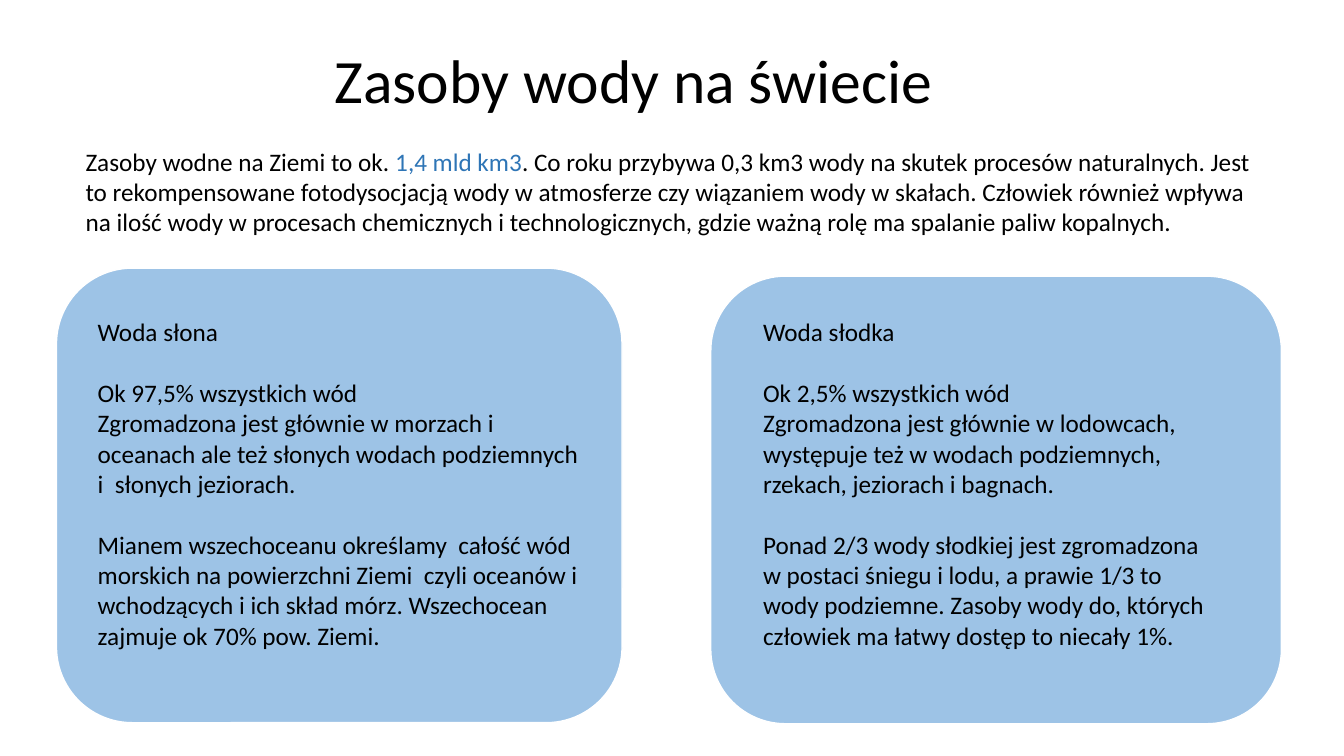
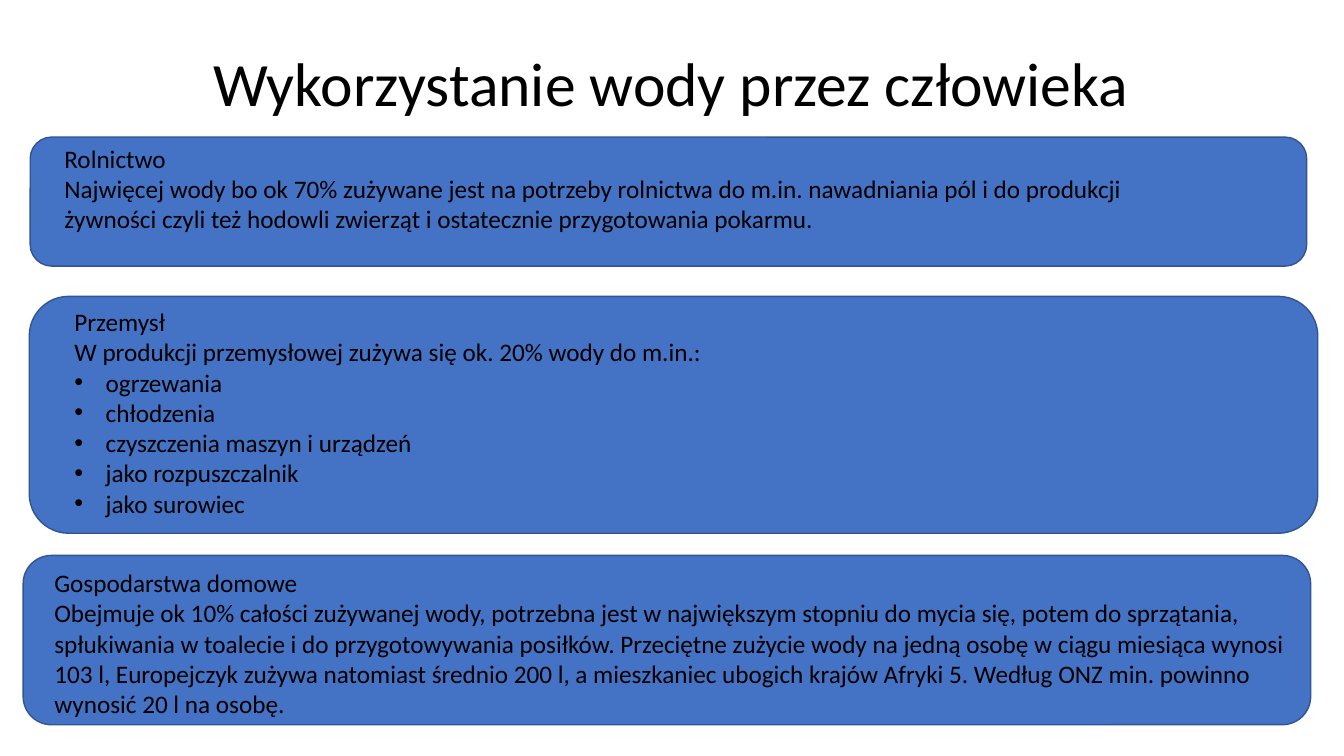
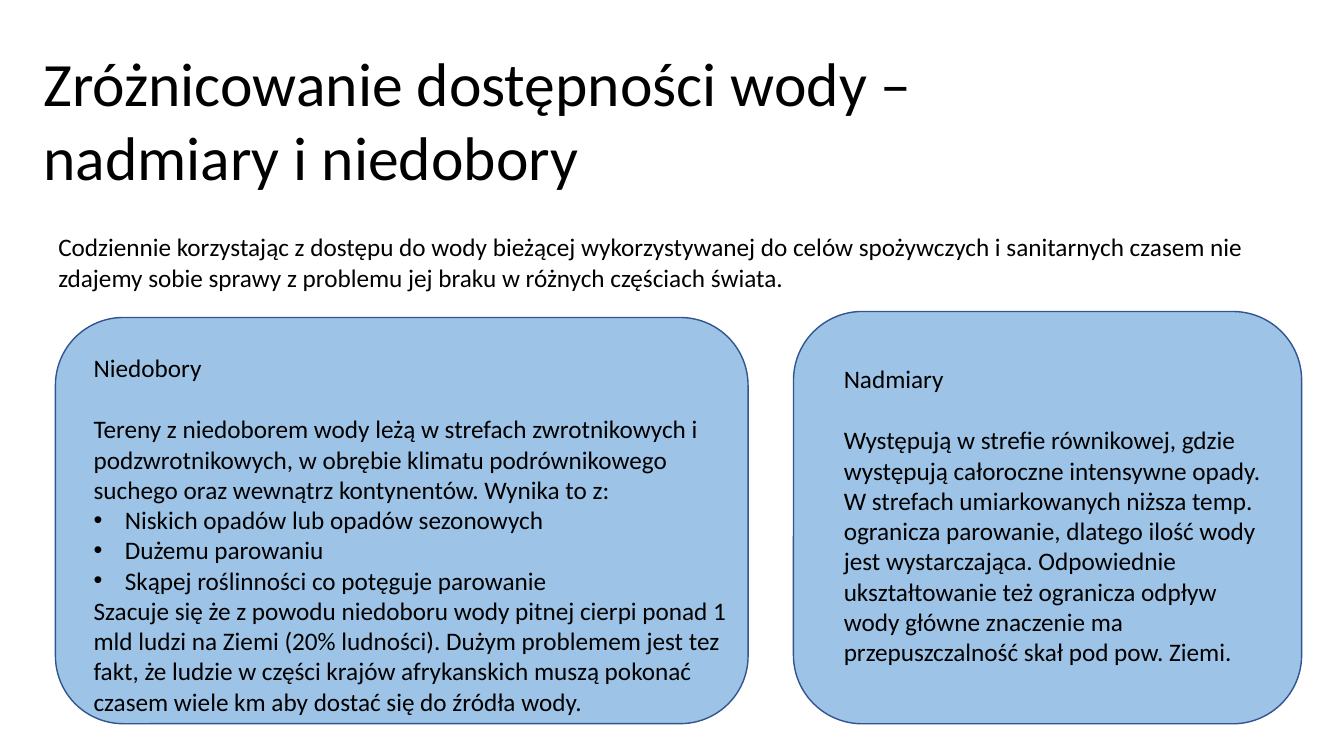
"""Build three slides on the world's water resources, its use and its availability."""
import pptx
import pptx.dml.color
import pptx.enum.shapes
import pptx.enum.text
import pptx.util
from lxml import etree

Inches, Pt = pptx.util.Inches, pptx.util.Pt

COLORS = {
    "paper": "FFFFFF",
    "ink": "000000",
    "accent": "2E75B6",
    "light": "9DC3E6",
    "strong": "4472C4",
    "outline": "325491",
}
FONT = "Calibri"
TITLE_SIZE, BODY_SIZE = 44, 18
BULLET_INDENT = Inches(0.31)
PARAGRAPH_FORMATS = {
    "plain": {},
    "gap": {"space_before": Pt(22)},
    "bullet": {},
}
FRAME_FORMAT = {
    "word_wrap": True,
    "auto_size": pptx.enum.text.MSO_AUTO_SIZE.SHAPE_TO_FIT_TEXT,
    "vertical_anchor": pptx.enum.text.MSO_ANCHOR.TOP,
}

SLIDES = [
    {
        "title": ((3.22, 0.37, 7.25, 0.84), ["Zasoby wody na świecie"]),
        "panel_style": ("light", "paper"),
        "panels": [(0.56, 2.66, 5.61, 4.51), (7.05, 2.74, 5.66, 4.44)],
        "texts": [
            ((0.75, 1.4, 11.95, 1.01), [
                ("plain", [
                    ("Zasoby wodne na Ziemi to ok. ", "ink"),
                    ("1,4 mld km3", "accent"),
                    (". Co roku przybywa 0,3 km3 wody na skutek procesów naturalnych. "
                     "Jest to rekompensowane fotodysocjacją wody w atmosferze czy wiązaniem "
                     "wody w skałach. Człowiek również wpływa na ilość wody w procesach "
                     "chemicznych i technologicznych, gdzie ważną rolę ma spalanie paliw "
                     "kopalnych.", "ink"),
                ]),
            ]),
            ((0.87, 3.09, 5.05, 4.04), [
                ("plain", "Woda słona"),
                ("gap", "Ok 97,5% wszystkich wód"),
                ("plain", "Zgromadzona jest głównie w morzach i oceanach ale też słonych "
                          "wodach podziemnych i  słonych jeziorach."),
                ("gap", "Mianem wszechoceanu określamy  całość wód morskich na powierzchni "
                        "Ziemi  czyli oceanów i wchodzących i ich skład mórz. Wszechocean "
                        "zajmuje ok 70% pow. Ziemi."),
            ]),
            ((7.47, 3.09, 4.66, 3.43), [
                ("plain", "Woda słodka"),
                ("gap", "Ok 2,5% wszystkich wód"),
                ("plain", "Zgromadzona jest głównie w lodowcach, występuje też w wodach "
                          "podziemnych, rzekach, jeziorach i bagnach."),
                ("gap", "Ponad 2/3 wody słodkiej jest zgromadzona w postaci śniegu i lodu, "
                        "a prawie 1/3 to wody podziemne. Zasoby wody do, których człowiek ma "
                        "łatwy dostęp to niecały 1%."),
            ]),
        ],
    },
    {
        "title": ((2.02, 0.4, 9.52, 0.84), ["Wykorzystanie wody przez człowieka"]),
        "panel_style": ("strong", "outline"),
        "panels": [(0.3, 1.36, 12.66, 1.28), (0.29, 2.94, 12.78, 2.35),
                   (0.23, 5.51, 12.77, 1.68)],
        "texts": [
            ((0.54, 1.37, 11.27, 1.01), [
                ("plain", "Rolnictwo"),
                ("plain", "Najwięcej wody bo ok 70% zużywane jest na potrzeby rolnictwa do "
                          "m.in. nawadniania pól i do produkcji żywności czyli też hodowli "
                          "zwierząt i ostatecznie przygotowania pokarmu."),
            ]),
            ((0.64, 2.99, 11.06, 2.52), [
                ("plain", "Przemysł"),
                ("plain", "W produkcji przemysłowej zużywa się ok. 20% wody do m.in.:"),
                ("bullet", "ogrzewania"),
                ("bullet", "chłodzenia"),
                ("bullet", "czyszczenia maszyn i urządzeń"),
                ("bullet", "jako rozpuszczalnik"),
                ("bullet", "jako surowiec"),
            ]),
            ((0.44, 5.58, 12.69, 1.92), [
                ("plain", "Gospodarstwa domowe"),
                ("plain", "Obejmuje ok 10% całości zużywanej wody, potrzebna jest w największym "
                          "stopniu do mycia się, potem do sprzątania, spłukiwania w toalecie i "
                          "do przygotowywania posiłków. Przeciętne zużycie wody na jedną osobę "
                          "w ciągu miesiąca wynosi 103 l, Europejczyk zużywa natomiast średnio "
                          "200 l, a mieszkaniec ubogich krajów Afryki 5. Według ONZ min. powinno "
                          "wynosić 20 l na osobę."),
            ]),
        ],
    },
    {
        "title": ((0.33, 0.4, 12.92, 1.58),
                  ["Zróżnicowanie dostępności wody –", "nadmiary i niedobory"]),
        "panel_style": ("light", "outline"),
        "panels": [(0.55, 3.15, 6.87, 4.03), (7.87, 3.09, 5.04, 4.09)],
        "texts": [
            ((0.48, 2.25, 12.37, 0.71), [
                ("plain", "Codziennie korzystając z dostępu do wody bieżącej wykorzystywanej do "
                          "celów spożywczych i sanitarnych czasem nie zdajemy sobie sprawy z "
                          "problemu jej braku w różnych częściach świata."),
            ]),
            ((0.83, 3.45, 6.5, 3.74), [
                ("plain", "Niedobory"),
                ("gap", "Tereny z niedoborem wody leżą w strefach zwrotnikowych i "
                        "podzwrotnikowych, w obrębie klimatu podrównikowego suchego oraz "
                        "wewnątrz kontynentów. Wynika to z:"),
                ("bullet", "Niskich opadów lub opadów sezonowych"),
                ("bullet", "Dużemu parowaniu"),
                ("bullet", "Skąpej roślinności co potęguje parowanie"),
                ("plain", "Szacuje się że z powodu niedoboru wody pitnej cierpi ponad 1 mld "
                          "ludzi na Ziemi (20% ludności). Dużym problemem jest tez fakt, że "
                          "ludzie w części krajów afrykanskich muszą pokonać czasem wiele km "
                          "aby dostać się do źródła wody."),
            ]),
            ((8.27, 3.56, 4.39, 3.13), [
                ("plain", "Nadmiary"),
                ("gap", "Występują w strefie równikowej, gdzie występują całoroczne intensywne "
                        "opady. W strefach umiarkowanych niższa temp. ogranicza parowanie, "
                        "dlatego ilość wody jest wystarczająca. Odpowiednie ukształtowanie też "
                        "ogranicza odpływ wody główne znaczenie ma przepuszczalność skał pod "
                        "pow. Ziemi."),
            ]),
        ],
    },
]


def color(name):
    return pptx.dml.color.RGBColor.from_string(COLORS[name])


def apply(target, values):
    for name, value in values.items():
        setattr(target, name, value)


def add_bullet(para):
    properties = para._p.get_or_add_pPr()
    properties.set("marL", str(BULLET_INDENT))
    properties.set("indent", str(-BULLET_INDENT))
    namespace = "{http://schemas.openxmlformats.org/drawingml/2006/main}"
    etree.SubElement(properties, namespace + "buFont", typeface="Arial")
    etree.SubElement(properties, namespace + "buChar", char="•")


def add_text(slide, place, paragraphs, size):
    box = slide.shapes.add_textbox(*map(Inches, place))
    frame = box.text_frame
    apply(frame, FRAME_FORMAT)
    for index, (style, content) in enumerate(paragraphs):
        para = frame.add_paragraph() if index else frame.paragraphs[0]
        apply(para, PARAGRAPH_FORMATS[style])
        if style == "bullet":
            add_bullet(para)
        spans = [(content, "ink")] if isinstance(content, str) else content
        for text, color_name in spans:
            span = para.add_run()
            span.text = text
            apply(span.font, {"name": FONT, "size": Pt(size)})
            span.font.color.rgb = color(color_name)


def add_panel(slide, place, fill, outline):
    panel = slide.shapes.add_shape(
        pptx.enum.shapes.MSO_SHAPE.ROUNDED_RECTANGLE, *map(Inches, place))
    panel.shadow.inherit = False
    panel.fill.solid()
    panel.fill.fore_color.rgb = color(fill)
    panel.line.color.rgb = color(outline)
    panel.line.width = Pt(1)


def main():
    deck = pptx.Presentation()
    apply(deck, {"slide_width": Inches(13.33), "slide_height": Inches(7.5)})
    for page in SLIDES:
        slide = deck.slides.add_slide(deck.slide_layouts[6])
        title_place, title_lines = page["title"]
        add_text(slide, title_place, [("plain", line) for line in title_lines], TITLE_SIZE)
        for place in page["panels"]:
            add_panel(slide, place, *page["panel_style"])
        for place, paragraphs in page["texts"]:
            add_text(slide, place, paragraphs, BODY_SIZE)
    deck.save("out.pptx")


if __name__ == "__main__":
    main()
